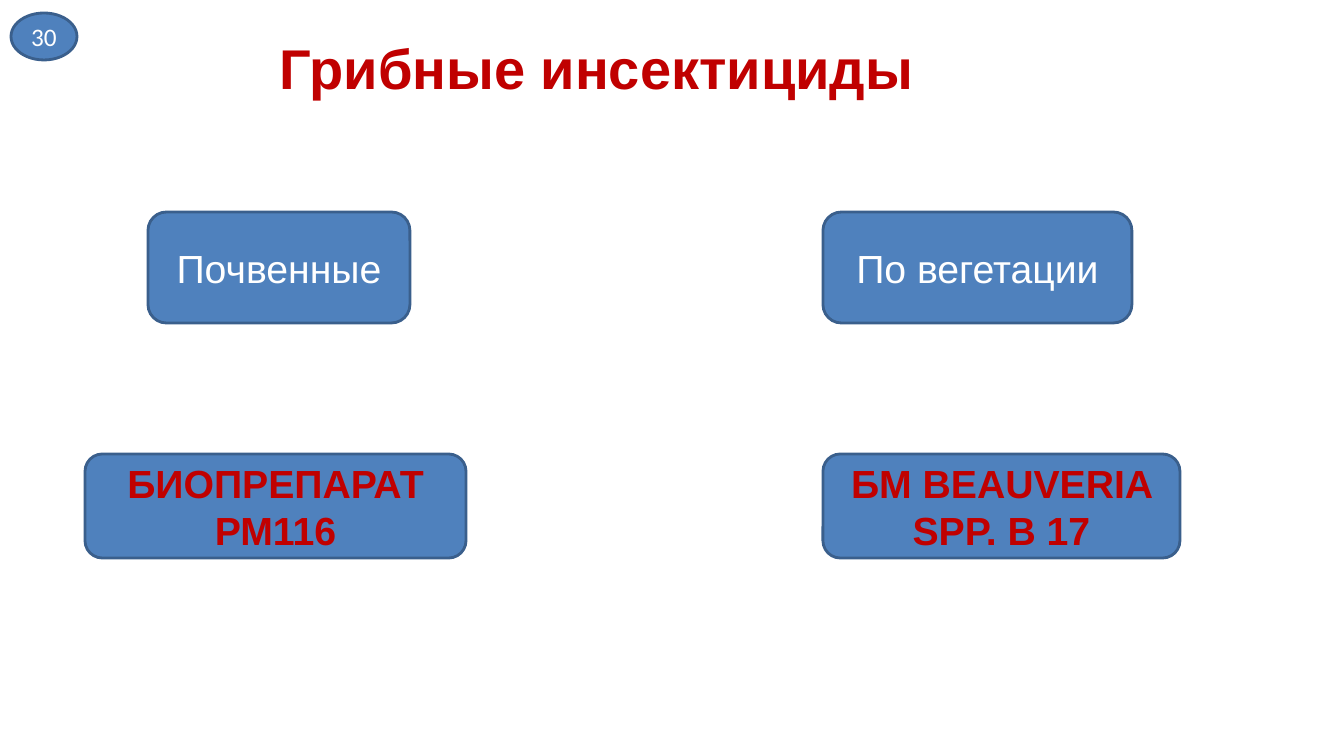
from pptx import Presentation
from pptx import util as u
from pptx.dml.color import RGBColor
from pptx.enum import shapes, text

PX = 914400 / 100.8
COLORS = {"red": "C00000", "white": "FFFFFF", "blue": "4F81BD", "edge": "3A5F8C"}


def px(*lengths):
    return [u.Emu(round(length * PX)) for length in lengths]


def write(frame, wording, color, **font_format):
    frame.word_wrap = True
    paragraph = frame.paragraphs[0]
    paragraph.alignment = text.PP_ALIGN.CENTER
    run = paragraph.add_run()
    run.text = wording
    for name, value in font_format.items():
        setattr(run.font, name, value)
    run.font.color.rgb = RGBColor.from_string(COLORS[color])


deck = Presentation()
deck.slide_width, deck.slide_height = px(1344, 756)
slide = deck.slides.add_slide(deck.slide_layouts[6])

# Title
title = slide.shapes.add_textbox(*px(140, 29, 913, 78))
write(title.text_frame, "Грибные инсектициды", "red",
      name="Arial", size=u.Pt(40), bold=True)

# Text styles: groups, preparations and slide number
group = {"color": "white", "name": "Arial", "size": u.Pt(28), "bold": False}
preparation = {**group, "color": "red", "bold": True}
number = {**group, "name": "Calibri", "size": u.Pt(18)}

# Groups in the upper row, preparations below, number in the corner
PROCESS = shapes.MSO_SHAPE.FLOWCHART_ALTERNATE_PROCESS
ROUNDED = shapes.MSO_SHAPE.ROUNDED_RECTANGLE
OVAL = shapes.MSO_SHAPE.OVAL
SOIL_CENTER, VEGETATION_LEFT = 279, 823
GROUP_ROW, PREPARATION_ROW = (212, 111), (454, 104)
blocks = [
    (PROCESS, 148, 262, GROUP_ROW, "Почвенные", group),
    (PROCESS, VEGETATION_LEFT, 309, GROUP_ROW, "По вегетации", group),
    (ROUNDED, 85, 381, PREPARATION_ROW, "БИОПРЕПАРАТ РМ116", preparation),
    (PROCESS, VEGETATION_LEFT, 357, PREPARATION_ROW, "БМ BEAUVERIA SPP. B 17", preparation),
    (OVAL, 11, 66, (13, 47), "30", number),
]
for form, left, width, (top, height), wording, style in blocks:
    block = slide.shapes.add_shape(form, *px(left, top, width, height))
    block.shadow.inherit = False
    block.fill.solid()
    block.fill.fore_color.rgb = RGBColor.from_string(COLORS["blue"])
    block.line.color.rgb = RGBColor.from_string(COLORS["edge"])
    block.line.width = u.Pt(2)
    frame = block.text_frame
    frame.margin_left = frame.margin_right = 0
    frame.vertical_anchor = text.MSO_ANCHOR.MIDDLE
    write(frame, wording, **style)

deck.save("out.pptx")
